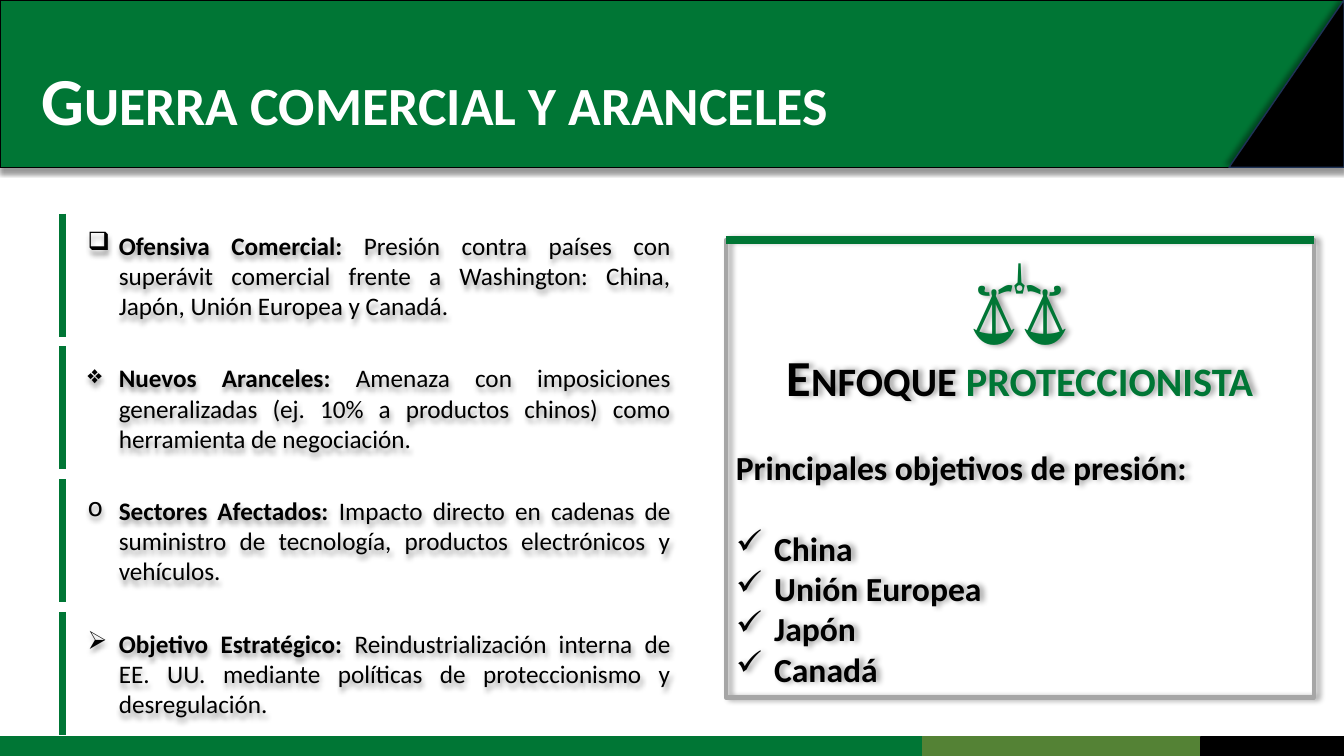
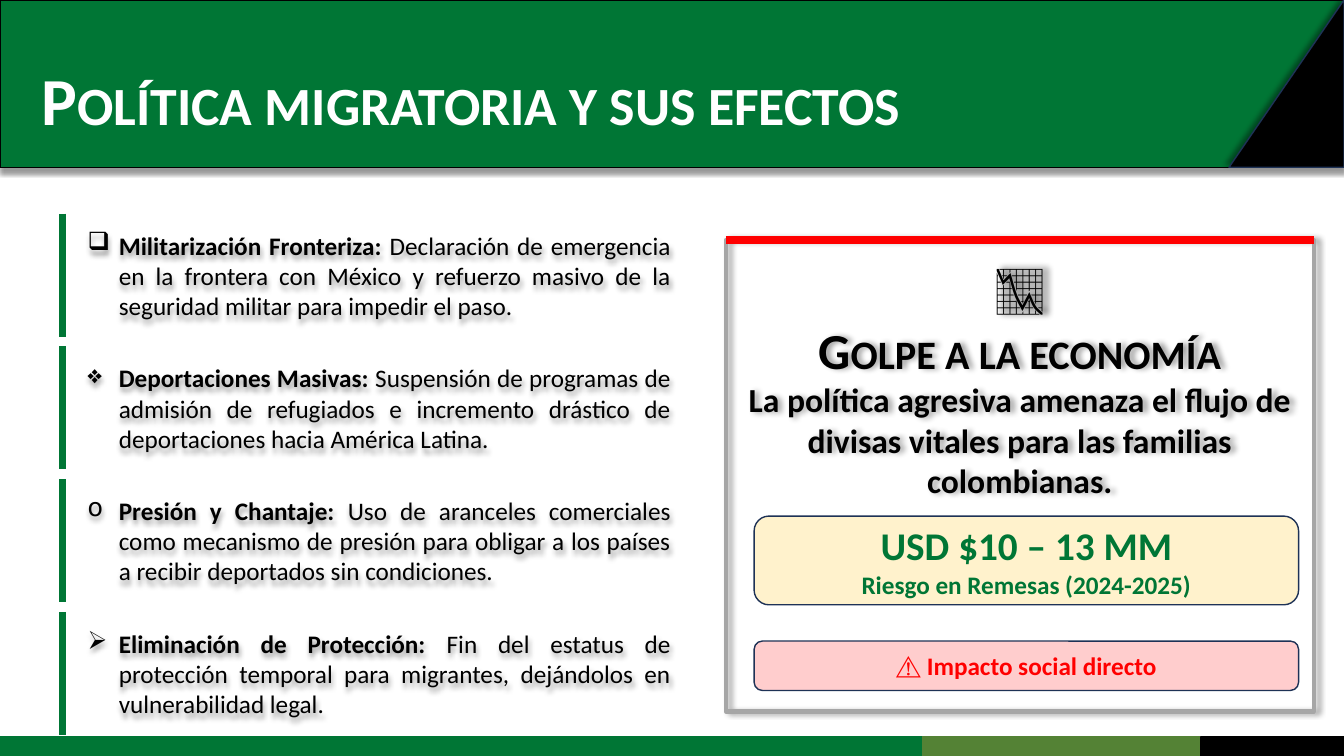
from dataclasses import dataclass

from lxml.etree import SubElement
from pptx import Presentation
from pptx.dml.color import RGBColor
from pptx.enum.shapes import MSO_CONNECTOR, MSO_SHAPE
from pptx.enum.text import MSO_ANCHOR, MSO_AUTO_SIZE, PP_ALIGN
from pptx.oxml.ns import qn
from pptx.util import Emu, Inches, Pt


@dataclass(frozen=True)
class Theme:
    font: str = "Calibri"
    green: str = "007635"
    olive: str = "548235"
    black: str = "000000"
    white: str = "FFFFFF"
    navy: str = "1E3256"
    gray: str = "A6A6A6"
    red: str = "FF0000"
    cream: str = "FFF2CC"
    pink: str = "FFCDCD"
    title: int = 48
    icon: int = 60
    small_icon: int = 44
    heading: int = 36
    figure: int = 28
    lead: int = 24
    body: int = 18
    gap: int = 29


THEME = Theme()
WIDTH, HEIGHT = 13.33, 7.5
HEADER_HEIGHT = 1.66
ROW_TOPS = (2.12, 6.07)
ROW_HEIGHT = 1.22
PANEL_LEFT, PANEL_TOP, PANEL_WIDTH = 7.2, 2.38, 5.83
BULLETS = "❑❖o➢"

TRADE_POINTS = [
    ("Ofensiva Comercial:", " Presión contra países con superávit comercial frente a "
     "Washington: China, Japón, Unión Europea y Canadá."),
    ("Nuevos Aranceles: ", "Amenaza con imposiciones generalizadas (ej. 10% a productos "
     "chinos) como herramienta de negociación."),
    ("Sectores Afectados: ", "Impacto directo en cadenas de suministro de tecnología, "
     "productos electrónicos y vehículos."),
    ("Objetivo Estratégico: ", "Reindustrialización interna de EE. UU. mediante políticas "
     "de proteccionismo y desregulación."),
]
MIGRATION_POINTS = [
    ("Militarización Fronteriza: ", "Declaración de emergencia en la frontera con México y "
     "refuerzo masivo de la seguridad militar para impedir el paso."),
    ("Deportaciones Masivas: ", "Suspensión de programas de admisión de refugiados e "
     "incremento drástico de deportaciones hacia América Latina."),
    ("Presión y Chantaje: ", "Uso de aranceles comerciales como mecanismo de presión para "
     "obligar a los países a recibir deportados sin condiciones."),
    ("Eliminación de Protección: ", "Fin del estatus de protección temporal para migrantes, "
     "dejándolos en vulnerabilidad legal."),
]


# Text
def add_span(para, text, size=THEME.body, color=THEME.black, bold=True, small_caps=False):
    span = para.add_run()
    span.text = text
    font = span.font
    font.name, font.size, font.bold = THEME.font, Pt(size), bold
    font.color.rgb = RGBColor.from_string(color)
    if small_caps:
        font._element.set("cap", "small")


def add_para(frame, text="", align=PP_ALIGN.CENTER, bullet=None, indent=0, before=0, **style):
    para = frame.paragraphs[0]
    if para.runs:
        para = frame.add_paragraph()
    para.alignment = align
    para.space_before = Pt(before)
    if bullet:
        properties = para._p.get_or_add_pPr()
        properties.set("marL", str(Inches(indent)))
        properties.set("indent", str(-Inches(indent)))
        SubElement(properties, qn("a:buChar")).set("char", bullet)
    if text:
        add_span(para, text, **style)
    return para


def set_frame(shape, anchor=MSO_ANCHOR.MIDDLE):
    frame = shape.text_frame
    frame.word_wrap = True
    frame.auto_size = MSO_AUTO_SIZE.NONE
    frame.vertical_anchor = anchor
    return frame


# Shapes and lines
def set_shadow(shape, angle=None):
    shape.shadow.inherit = False
    if angle is None:
        return
    effects = shape.element.spPr.find(qn("a:effectLst"))
    shadow = SubElement(effects, qn("a:outerShdw"), blurRad=str(Pt(4)), dist=str(Pt(3)),
                        dir=str(angle * 60000), algn="ctr", rotWithShape="0")
    color = SubElement(shadow, qn("a:srgbClr"), val=THEME.black)
    SubElement(color, qn("a:alpha"), val="40000")


def style_shape(shape, fill, line, line_width=1, angle=None):
    if fill:
        shape.fill.solid()
        shape.fill.fore_color.rgb = RGBColor.from_string(fill)
    else:
        shape.fill.background()
    shape.line.color.rgb = RGBColor.from_string(line)
    shape.line.width = Pt(line_width)
    set_shadow(shape, angle)
    return shape


def add_box(slide, place, fill, line, kind=MSO_SHAPE.RECTANGLE, **style):
    shape = slide.shapes.add_shape(kind, *map(Inches, place))
    return style_shape(shape, fill, line, **style)


def add_line(slide, start, end, color, width):
    line = slide.shapes.add_connector(MSO_CONNECTOR.STRAIGHT, *map(Inches, start + end))
    line.line.color.rgb = RGBColor.from_string(color)
    line.line.width = Pt(width)
    SubElement(line.element.spPr, qn("a:effectLst"))


# Shared header and footer, kept on the layout
def move_bands_to_layout(slide):
    header = add_box(slide, (0, 0, WIDTH, HEADER_HEIGHT), THEME.green, THEME.black, angle=90)
    builder = slide.shapes.build_freeform(Inches(12.19), Inches(HEADER_HEIGHT))
    builder.add_line_segments([(Inches(WIDTH), 0), (Inches(WIDTH), Inches(HEADER_HEIGHT))])
    corner = style_shape(builder.convert_to_shape(), THEME.black, THEME.navy, angle=225)
    bands = [header, corner]
    left = 0
    for right, color in ((9.15, THEME.green), (11.91, THEME.olive), (WIDTH, THEME.black)):
        bands.append(add_box(slide, (left, 7.31, right - left, 0.19), color, color))
        left = right
    tree = slide.slide_layout.shapes.element
    for position, band in enumerate(bands, start=2):
        tree.insert(position, band.element)


# Parts of a slide
def add_title(slide, text):
    title = slide.shapes.title
    title.left, title.top, title.width, title.height = map(Inches, (0.31, 0.4, 12.1, 1.26))
    para = add_para(set_frame(title), text, align=PP_ALIGN.LEFT, size=THEME.title,
                    color=THEME.white, small_caps=True)
    para.line_spacing = 0.9


def add_points(slide, points):
    first, last = ROW_TOPS
    pitch = (last - first) / (len(points) - 1)
    for row, (bullet, (label, detail)) in enumerate(zip(BULLETS, points)):
        top = first + row * pitch
        box = slide.shapes.add_textbox(*map(Inches, (0.77, top, 5.98, ROW_HEIGHT)))
        set_shadow(box, 90)
        para = add_para(set_frame(box), label, align=PP_ALIGN.JUSTIFY, bullet=bullet, indent=0.31)
        add_span(para, detail, bold=False)
        add_line(slide, (0.62, top), (0.62, top + ROW_HEIGHT), THEME.green, 4.5)


def add_panel(slide, height, accent):
    panel = add_box(slide, (PANEL_LEFT, PANEL_TOP, PANEL_WIDTH, height), None, THEME.gray,
                    line_width=3, angle=0)
    add_line(slide, (PANEL_LEFT, PANEL_TOP), (PANEL_LEFT + PANEL_WIDTH, PANEL_TOP), accent, 6)
    return set_frame(panel, MSO_ANCHOR.TOP)


def add_callout(slide, top, height, fill):
    return set_frame(add_box(slide, (7.48, top, 5.4, height), fill, THEME.navy,
                             kind=MSO_SHAPE.ROUNDED_RECTANGLE))


# Slides
def fill_trade_slide(slide):
    add_title(slide, "Guerra comercial y aranceles")
    add_points(slide, TRADE_POINTS)
    frame = add_panel(slide, 4.54, THEME.green)
    add_para(frame, "⚖️", size=THEME.icon, color=THEME.green, bold=False)
    heading = add_para(frame, "Enfoque ", size=THEME.heading, small_caps=True)
    add_span(heading, "proteccionista", size=THEME.heading, color=THEME.green, small_caps=True)
    add_para(frame, "Principales objetivos de presión:", align=PP_ALIGN.JUSTIFY,
             before=THEME.gap, size=THEME.lead)
    for row, target in enumerate(("China", "Unión Europea", "Japón", "Canadá")):
        add_para(frame, target, align=PP_ALIGN.JUSTIFY, bullet="✓", indent=0.38,
                 before=0 if row else THEME.gap, size=THEME.lead)


def fill_migration_slide(slide):
    add_title(slide, "Política migratoria y sus efectos")
    add_points(slide, MIGRATION_POINTS)
    frame = add_panel(slide, 4.68, THEME.red)
    add_para(frame, "📉", size=THEME.small_icon, small_caps=True)
    add_para(frame, "Golpe a la economía", size=THEME.heading, small_caps=True)
    add_para(frame, "La política agresiva amenaza el flujo de divisas vitales para las "
             "familias colombianas.", size=THEME.lead)
    risk = add_callout(slide, 5.12, 0.88, THEME.cream)
    add_para(risk, "USD $10 – 13 MM", size=THEME.figure, color=THEME.green)
    add_para(risk, "Riesgo en Remesas (2024-2025)", color=THEME.green)
    impact = add_callout(slide, 6.36, 0.49, THEME.pink)
    add_para(impact, "⚠️ Impacto social directo", color=THEME.red)


def main():
    deck = Presentation()
    deck.slide_width, deck.slide_height = Inches(WIDTH), Inches(HEIGHT)
    layout = deck.slide_layouts[5]
    trade, migration = (deck.slides.add_slide(layout) for _ in range(2))
    move_bands_to_layout(trade)
    fill_trade_slide(trade)
    fill_migration_slide(migration)
    deck.save("out.pptx")


if __name__ == "__main__":
    main()
